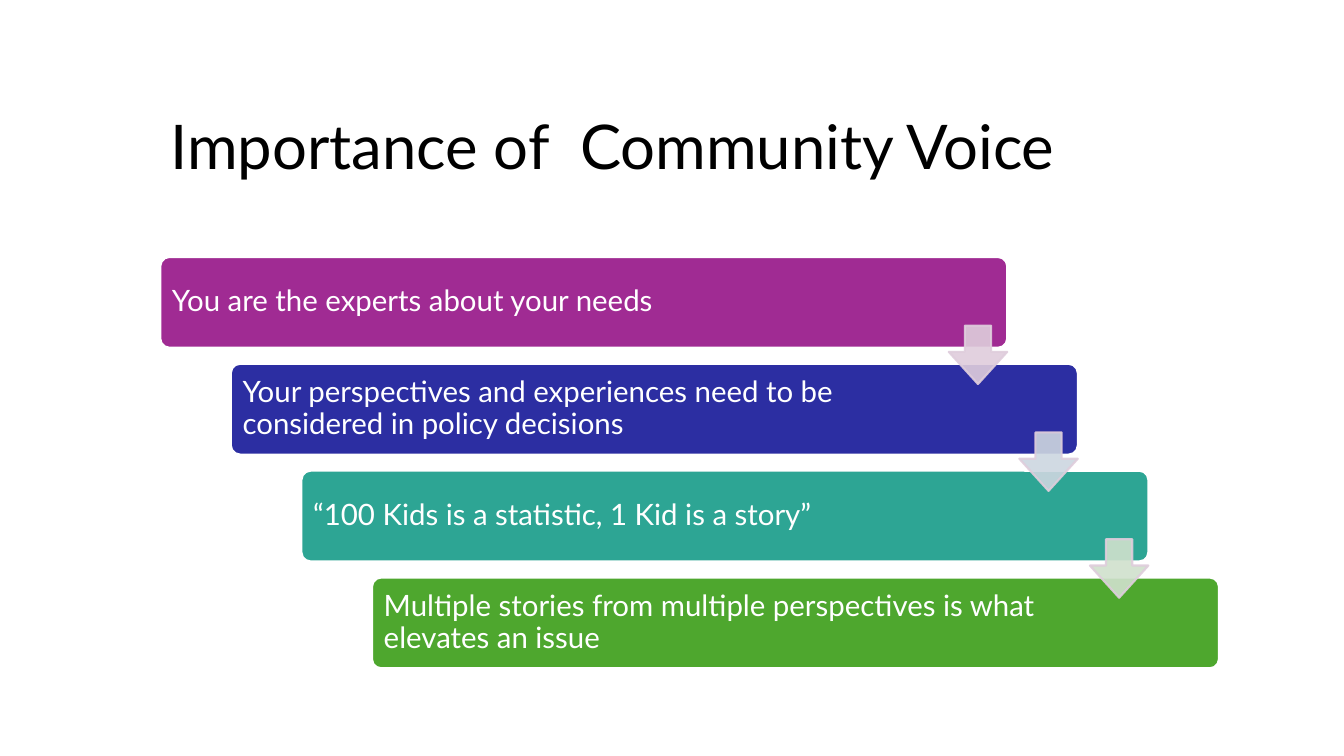
from lxml import etree
from pptx import Presentation
from pptx import util as u
from pptx.dml.color import RGBColor
from pptx.enum import shapes, text
from pptx.oxml.ns import qn

PX = 9144
COLORS = {
    "title": "000000", "white": "FFFFFF",
    "purple": "A02B93", "blue": "2C2EA2", "teal": "2DA594", "green": "4EA72E",
    "arrow_line": "DFCDDC",
    "arrow_purple": "DFCDDC", "arrow_blue": "CDD6E0", "arrow_teal": "D0E1CD",
}
STEPS = [
    ("You are the experts about your needs", "purple"),
    ("Your perspectives and experiences need to be considered in policy decisions", "blue"),
    ("“100 Kids is a statistic, 1 Kid is a story”", "teal"),
    ("Multiple stories from multiple perspectives is what elevates an issue", "green"),
]


def px(*lengths):
    """Turn px lengths into EMU."""
    return [u.Emu(length * PX) for length in lengths]


def set_text(shape, wording, size, color, margins):
    """Write one left-aligned, vertically centred paragraph into a shape."""
    left, top, right, bottom = px(*margins)
    frame = shape.text_frame
    frame_format = {
        "word_wrap": True, "vertical_anchor": text.MSO_ANCHOR.MIDDLE,
        "margin_left": left, "margin_top": top,
        "margin_right": right, "margin_bottom": bottom,
    }
    for name, value in frame_format.items():
        setattr(frame, name, value)
    paragraph = frame.paragraphs[0]
    paragraph.text = wording
    for name, value in {"alignment": text.PP_ALIGN.LEFT, "line_spacing": 0.9}.items():
        setattr(paragraph, name, value)
    for name, value in {"name": "Lato", "size": u.Pt(size)}.items():
        setattr(paragraph.font, name, value)
    paragraph.font.color.rgb = RGBColor.from_string(COLORS[color])


def add_filled(slide, kind, box, adjustments, fill, line, opacity=100):
    """Add a preset shape with its fill, outline and opacity."""
    shape = slide.shapes.add_shape(kind, *px(*box))
    shape.shadow.inherit = False
    for index, value in enumerate(adjustments):
        shape.adjustments[index] = value
    shape.line.width = u.Pt(1.5)
    shape.fill.solid()
    for paint, color in ((shape.fill.fore_color, fill), (shape.line.color, line)):
        paint.rgb = RGBColor.from_string(COLORS[color])
    if opacity < 100:
        for color in shape.element.spPr.iter(qn("a:srgbClr")):
            etree.SubElement(color, qn("a:alpha"), val=str(opacity * 1000))
    return shape


def add_title(slide, box):
    """Place the slide title in the given box."""
    title = slide.shapes.add_textbox(*px(*box))
    set_text(title, "Importance of  Community Voice", 44, "title", (10, 5, 10, 0))


def add_staircase(slide, box):
    """Place descending bars in the box, joined by arrows at their right ends."""
    left, top, width, height = box
    bar_width, bar_height, arrow_size = 840, 90, 58
    step_x = (width - bar_width) // (len(STEPS) - 1)
    step_y = (height - bar_height) // (len(STEPS) - 1)
    corners = [(left + i * step_x, top + i * step_y) for i in range(len(STEPS))]
    for (x, y), (wording, color) in zip(corners, STEPS):
        bar = add_filled(slide, shapes.MSO_SHAPE.ROUNDED_RECTANGLE,
                         (x, y, bar_width, bar_height), [0.1], color, "white")
        set_text(bar, wording, 21, "white", (9, 9, 138, 9))
    for (x, y), (_, color) in zip(corners[:-1], STEPS):
        arrow_box = (x + bar_width - arrow_size, y + 68, arrow_size, arrow_size)
        add_filled(slide, shapes.MSO_SHAPE.DOWN_ARROW, arrow_box, [0.45, 0.55],
                   f"arrow_{color}", "arrow_line", 90)


def main():
    """Build and save the presentation."""
    presentation = Presentation()
    presentation.slide_width, presentation.slide_height = px(1333, 750)
    slide = presentation.slides.add_slide(presentation.slide_layouts[6])
    add_title(slide, (159, 88, 1050, 115))
    add_staircase(slide, (159, 255, 1050, 408))
    presentation.save("out.pptx")


if __name__ == "__main__":
    main()
